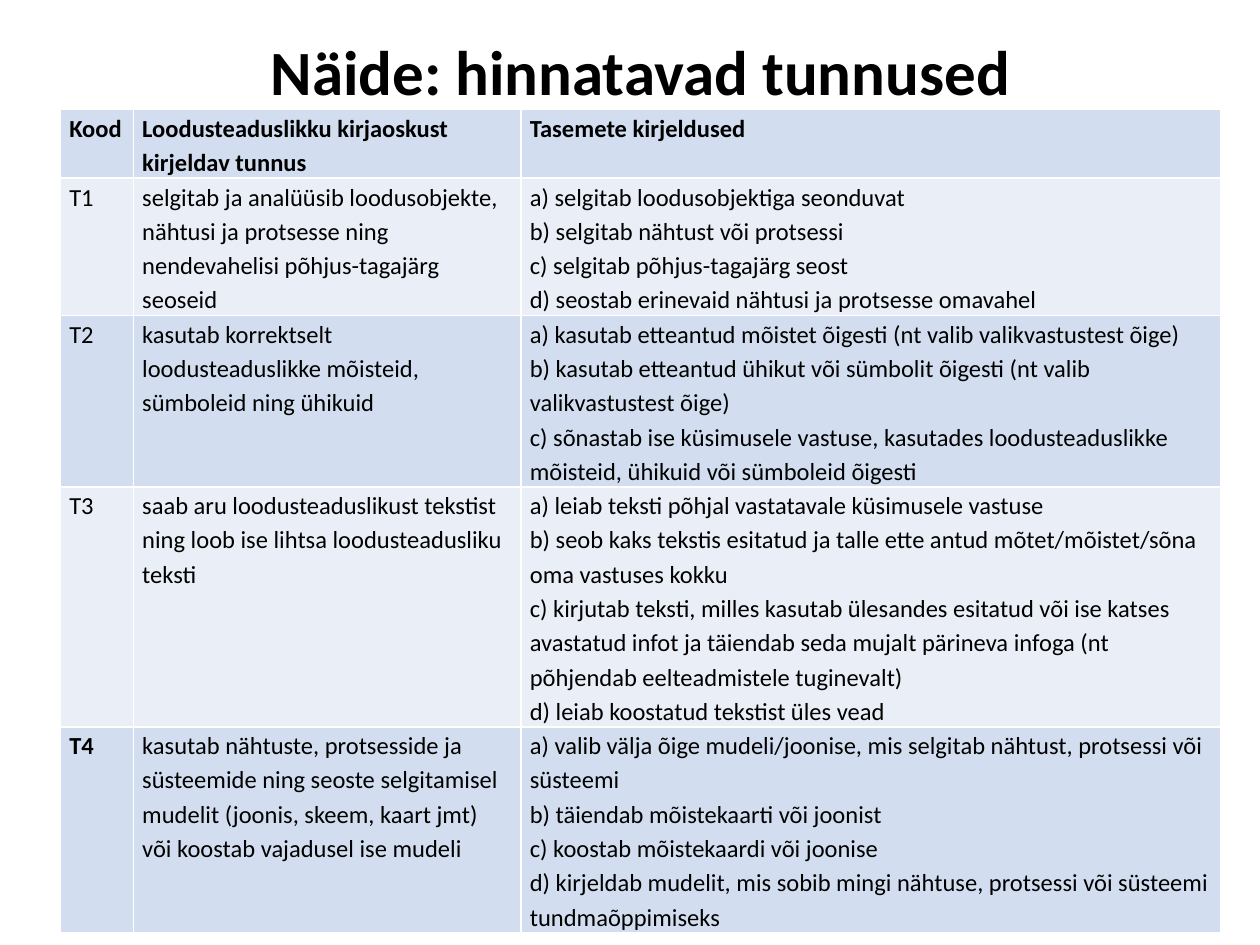
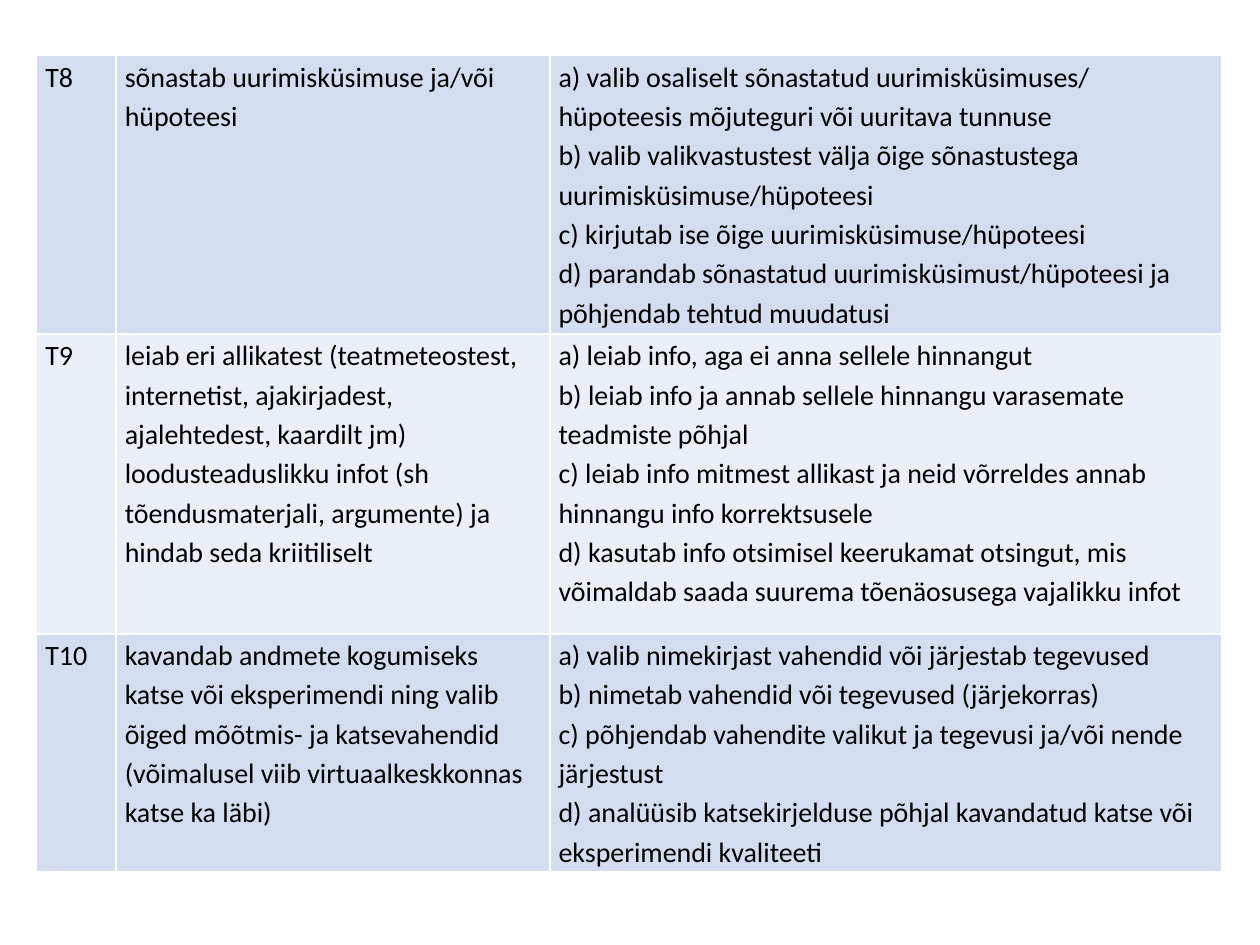
from collections import namedtuple
from itertools import accumulate

from lxml.etree import SubElement as Sub
from pptx import Presentation
from pptx.dml.color import RGBColor as RGB
from pptx.enum.text import MSO_ANCHOR as ANCHOR, PP_ALIGN as ALIGN
from pptx.oxml.ns import qn
from pptx.util import Inches, Pt

Box = namedtuple("Box", "x y w h")

SLIDE_W, SLIDE_H = Inches(10), Inches(7.5)
GRID_COLS, GRID_ROWS = 1000, 750
COL, ROW = SLIDE_W // GRID_COLS, SLIDE_H // GRID_ROWS

COLORS = {"text": "000000", "border": "FFFFFF", "dark": "D2DEEF", "light": "EAEFF7"}
FONT = "Calibri"
TITLE = {"size": Pt(36), "bold": True}
TITLE_FRAME = {"word_wrap": True, "vertical_anchor": ANCHOR.MIDDLE,
               "margin_left": 10 * COL, "margin_right": 10 * COL,
               "margin_top": 10 * ROW, "margin_bottom": 10 * ROW}
TITLE_PARA = {"alignment": ALIGN.CENTER, "line_spacing": 0.9}
CELL = {"margin_left": 7 * COL, "margin_right": 7 * COL,
        "margin_top": 0, "margin_bottom": 0, "vertical_anchor": ANCHOR.TOP}
CELL_PARA = {"line_spacing": 1.15}
PLAIN_TABLE = {"first_row": False, "horz_banding": False}

FEATURES = [
    ("Kood", "Loodusteaduslikku kirjaoskust kirjeldav tunnus",
     ["Tasemete kirjeldused"]),
    ("T1", "selgitab ja analüüsib loodusobjekte, nähtusi ja protsesse ning "
     "nendevahelisi põhjus-tagajärg seoseid",
     ["a) selgitab loodusobjektiga seonduvat",
      "b) selgitab nähtust või protsessi",
      "c) selgitab põhjus-tagajärg seost",
      "d) seostab erinevaid nähtusi ja protsesse omavahel"]),
    ("T2", "kasutab korrektselt loodusteaduslikke mõisteid, sümboleid ning ühikuid",
     ["a) kasutab etteantud mõistet õigesti (nt valib valikvastustest õige)",
      "b) kasutab etteantud ühikut või sümbolit õigesti (nt valib valikvastustest õige)",
      "c) sõnastab ise küsimusele vastuse, kasutades loodusteaduslikke mõisteid, "
      "ühikuid või sümboleid õigesti"]),
    ("T3", "saab aru loodusteaduslikust tekstist ning loob ise lihtsa "
     "loodusteadusliku teksti",
     ["a) leiab teksti põhjal vastatavale küsimusele vastuse",
      "b) seob kaks tekstis esitatud ja talle ette antud mõtet/mõistet/sõna "
      "oma vastuses kokku",
      "c) kirjutab teksti, milles kasutab ülesandes esitatud või ise katses avastatud "
      "infot ja täiendab seda mujalt pärineva infoga (nt põhjendab eelteadmistele "
      "tuginevalt)",
      "d) leiab koostatud tekstist üles vead"]),
    ("T4", "kasutab nähtuste, protsesside ja süsteemide ning seoste selgitamisel "
     "mudelit (joonis, skeem, kaart jmt) või koostab vajadusel ise mudeli",
     ["a) valib välja õige mudeli/joonise, mis selgitab nähtust, protsessi või süsteemi",
      "b) täiendab mõistekaarti või joonist",
      "c) koostab mõistekaardi või joonise",
      "d) kirjeldab mudelit, mis sobib mingi nähtuse, protsessi või süsteemi "
      "tundmaõppimiseks"]),
]
INQUIRY = [
    ("T8", "sõnastab uurimisküsimuse ja/või hüpoteesi",
     ["a) valib osaliselt sõnastatud uurimisküsimuses/ hüpoteesis mõjuteguri või "
      "uuritava tunnuse",
      "b) valib valikvastustest välja õige sõnastustega uurimisküsimuse/hüpoteesi",
      "c) kirjutab ise õige uurimisküsimuse/hüpoteesi",
      "d) parandab sõnastatud uurimisküsimust/hüpoteesi ja põhjendab tehtud muudatusi"]),
    ("T9", "leiab eri allikatest (teatmeteostest, internetist, ajakirjadest, "
     "ajalehtedest, kaardilt jm) loodusteaduslikku infot (sh tõendusmaterjali, "
     "argumente) ja hindab seda kriitiliselt",
     ["a) leiab info, aga ei anna sellele hinnangut",
      "b) leiab info ja annab sellele hinnangu varasemate teadmiste põhjal",
      "c) leiab info mitmest allikast ja neid võrreldes annab hinnangu info korrektsusele",
      "d) kasutab info otsimisel keerukamat otsingut, mis võimaldab saada suurema "
      "tõenäosusega vajalikku infot"]),
    ("T10", "kavandab andmete kogumiseks katse või eksperimendi ning valib õiged "
     "mõõtmis- ja katsevahendid (võimalusel viib virtuaalkeskkonnas katse ka läbi)",
     ["a) valib nimekirjast vahendid või järjestab tegevused",
      "b) nimetab vahendid või tegevused (järjekorras)",
      "c) põhjendab vahendite valikut ja tegevusi ja/või nende järjestust",
      "d) analüüsib katsekirjelduse põhjal kavandatud katse või eksperimendi kvaliteeti"]),
]


def apply(obj, fmt):
    for name, value in fmt.items():
        setattr(obj, name, value)


def place(box):
    return box.x * COL, box.y * ROW, box.w * COL, box.h * ROW


def shares(total, weights):
    edges = [round(total * e / sum(weights)) for e in accumulate(weights, initial=0)]
    return [b - a for a, b in zip(edges, edges[1:])]


def write(tf, lines, para_fmt, font_fmt):
    for i, line in enumerate(lines):
        p = tf.add_paragraph() if i else tf.paragraphs[0]
        apply(p, para_fmt)
        r = p.add_run()
        r.text = line
        apply(r.font, {"name": FONT, **font_fmt})
        r.font.color.rgb = RGB.from_string(COLORS["text"])


def add_borders(cell):
    tc_pr = cell._tc.get_or_add_tcPr()
    for side in "LRTB":
        ln = Sub(tc_pr, qn(f"a:ln{side}"), w=str(Pt(1)))
        fill = Sub(ln, qn("a:solidFill"))
        Sub(fill, qn("a:srgbClr"), val=COLORS["border"])


def add_title(slide, box, text):
    tf = slide.shapes.add_textbox(*place(box)).text_frame
    apply(tf, TITLE_FRAME)
    write(tf, [text], TITLE_PARA, TITLE)


def add_feature_table(slide, box, rows, col_weights, row_weights, size, bold_cells=()):
    tbl = slide.shapes.add_table(len(rows), len(col_weights), *place(box)).table
    apply(tbl, PLAIN_TABLE)
    for col, width in zip(tbl.columns, shares(box.w * COL, col_weights)):
        col.width = width
    for row, height in zip(tbl.rows, shares(box.h * ROW, row_weights)):
        row.height = height
    for i, (code, feature, levels) in enumerate(rows):
        for j, lines in enumerate(([code], [feature], levels)):
            cell = tbl.cell(i, j)
            apply(cell, CELL)
            add_borders(cell)
            cell.fill.solid()
            cell.fill.fore_color.rgb = RGB.from_string(COLORS["light" if i % 2 else "dark"])
            write(cell.text_frame, lines, CELL_PARA,
                  {"size": Pt(size), "bold": (i, j) in bold_cells})


def features_slide(slide):
    add_feature_table(slide, Box(48, 87, 921, 652), FEATURES, (58, 308, 556),
                      (2, 4, 5, 7, 6), 14, {(0, 0), (0, 1), (0, 2), (4, 0)})
    add_title(slide, Box(48, 10, 921, 99), "Näide: hinnatavad tunnused")


def inquiry_slide(slide):
    add_feature_table(slide, Box(29, 44, 941, 648), INQUIRY, (63, 344, 533),
                      (221, 238, 189), 16)


def main():
    prs = Presentation()
    apply(prs, {"slide_width": SLIDE_W, "slide_height": SLIDE_H})
    for build in (features_slide, inquiry_slide):
        build(prs.slides.add_slide(prs.slide_layouts[6]))
    prs.save("out.pptx")


if __name__ == "__main__":
    main()
